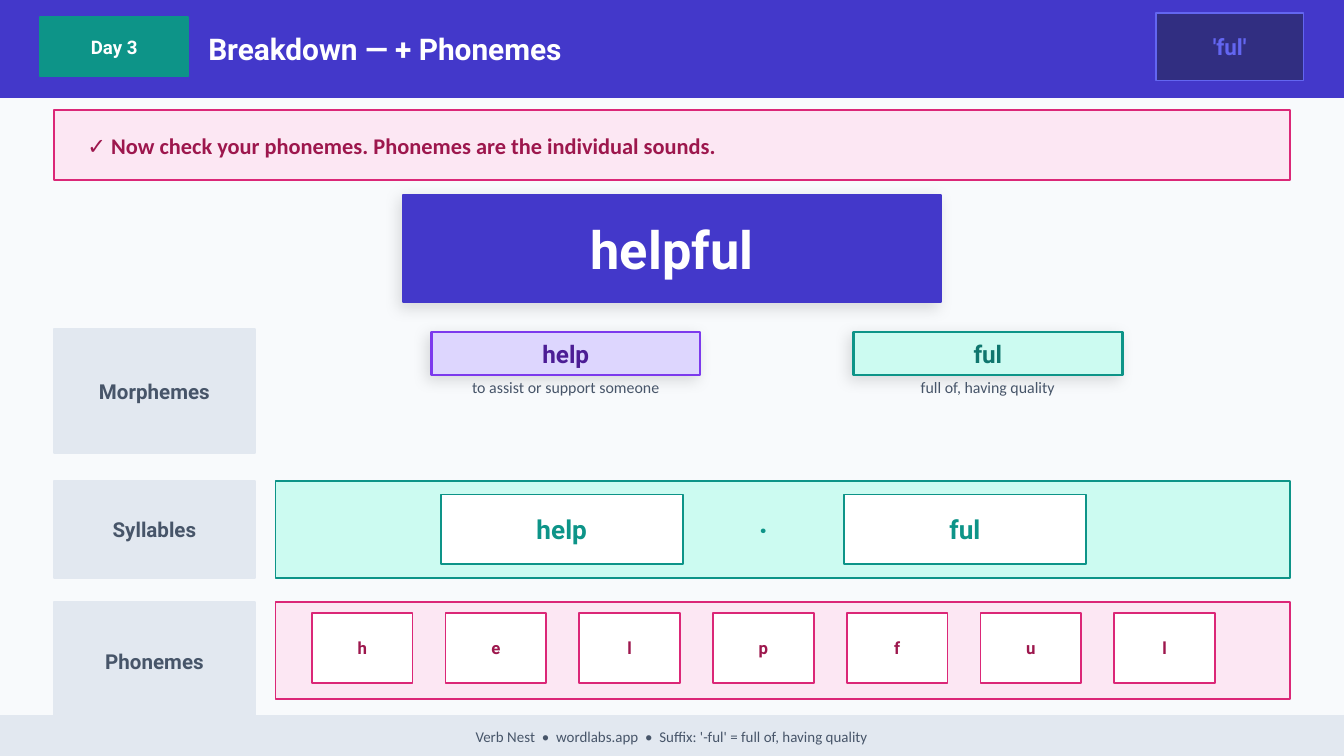
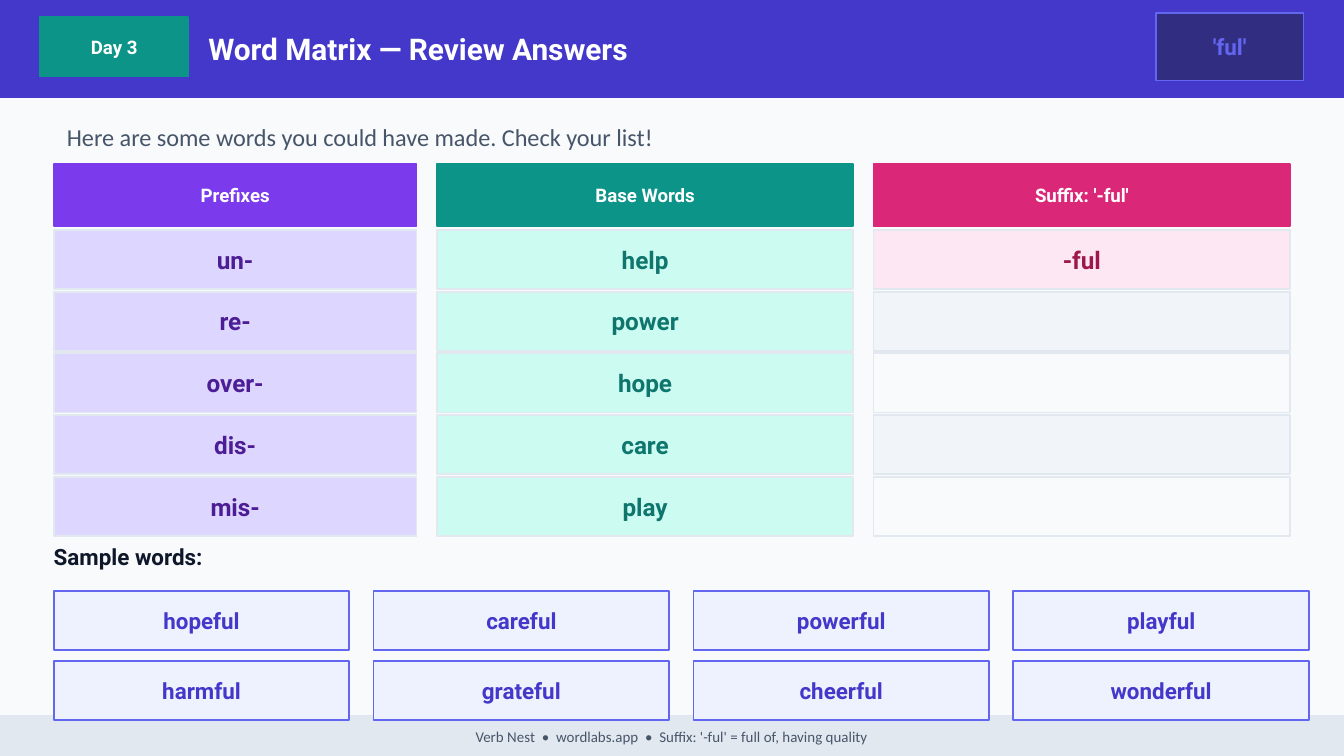
"""Build two lesson slides on the suffix -ful: word breakdown and word matrix."""
from lxml.etree import SubElement
from pptx import Presentation
from pptx.dml.color import RGBColor
from pptx.enum.shapes import MSO_SHAPE
from pptx.enum.text import MSO_ANCHOR, PP_ALIGN
from pptx.oxml.ns import qn
from pptx.util import Inches, Pt

INDIGO, NAVY, PERIWINKLE, ICE = "4338CA", "312E81", "6366F1", "EEF2FF"
TEAL, TEAL_DARK, MINT = "0D9488", "0F766E", "CCFBF1"
PINK, PINK_DARK, BLUSH = "DB2777", "9D174D", "FCE7F3"
VIOLET, VIOLET_DARK, LILAC = "7C3AED", "4C1D95", "DDD6FE"
WHITE, PAPER, FOG, MIST, SLATE, INK = "FFFFFF", "F8FAFC", "F1F5F9", "E2E8F0", "475569", "0F172A"


def add_text(slide, text, left, top, width, height, *, size=12, color=WHITE, bold=True,
             font="Roboto", align=PP_ALIGN.CENTER, anchor=MSO_ANCHOR.MIDDLE, inset=0,
             fill=None, line=None, line_width=1, shadow=False):
    """Place text in a plain box, or in a rectangle when a fill is given."""
    area = [Inches(value) for value in (left, top, width, height)]
    if fill:
        box = slide.shapes.add_shape(MSO_SHAPE.RECTANGLE, *area)
        box.fill.solid()
        box.fill.fore_color.rgb = RGBColor.from_string(fill)
        box.line.color.rgb = RGBColor.from_string(line or fill)
        box.line.width = Pt(line_width)
        box.shadow.inherit = False
        if shadow:
            effects = box.element.spPr.find(qn("a:effectLst"))
            outer = SubElement(effects, qn("a:outerShdw"), blurRad=str(Pt(8)), dist=str(Pt(3)),
                               dir=str(135 * 60000), algn="bl", rotWithShape="0")
            black = SubElement(outer, qn("a:srgbClr"), val="000000")
            SubElement(black, qn("a:alpha"), val="12000")
    else:
        box = slide.shapes.add_textbox(*area)
    if not text:
        return
    frame = box.text_frame
    frame.word_wrap = True
    frame.vertical_anchor = anchor
    frame.margin_left = frame.margin_right = Inches(inset)
    frame.margin_top = frame.margin_bottom = 0
    paragraph = frame.paragraphs[0]
    paragraph.alignment = align
    run = paragraph.add_run()
    run.text = text
    run.font.name = font
    run.font.size = Pt(size)
    run.font.bold = bold
    run.font.color.rgb = RGBColor.from_string(color)


def add_lesson_slide(deck, title):
    """Add a slide with the shared background, header band and footer."""
    slide = deck.slides.add_slide(deck.slide_layouts[6])
    slide.background.fill.solid()
    slide.background.fill.fore_color.rgb = RGBColor.from_string(PAPER)
    add_text(slide, "", 0, 0, 10, 0.72, fill=INDIGO)
    add_text(slide, "Day 3", 0.3, 0.13, 1.1, 0.44, size=10, fill=TEAL)
    add_text(slide, title, 1.55, 0, 8.1, 0.72, size=16, align=PP_ALIGN.LEFT)
    add_text(slide, "'ful'", 8.6, 0.1, 1.1, 0.5, color=PERIWINKLE, fill=NAVY, line=PERIWINKLE)
    add_text(slide, "Verb Nest  •  wordlabs.app  •  Suffix: '-ful' = full of, having quality",
             0, 5.33, 10, 0.3, size=8, color=SLATE, bold=False, font="Calibri", fill=MIST)
    return slide


deck = Presentation()
deck.slide_width, deck.slide_height = Inches(10), Inches(10) * 9 // 16

breakdown = add_lesson_slide(deck, "Breakdown — + Phonemes")
add_text(breakdown, "✓ Now check your phonemes. Phonemes are the individual sounds.",
         0.4, 0.82, 9.2, 0.52, color=PINK_DARK, font="Calibri", align=PP_ALIGN.LEFT,
         inset=0.25, fill=BLUSH, line=PINK)
add_text(breakdown, "helpful", 3, 1.45, 4, 0.8, size=28, fill=INDIGO, shadow=True)

for label, top, height in [("Morphemes", 2.45, 0.92), ("Syllables", 3.58, 0.72),
                           ("Phonemes", 4.48, 0.88)]:
    add_text(breakdown, label, 0.4, top, 1.5, height, size=11, color=SLATE, fill=MIST)

for morpheme, meaning, left, color, fill, line in [
    ("help", "to assist or support someone", 3.21, VIOLET_DARK, LILAC, VIOLET),
    ("ful", "full of, having quality", 6.35, TEAL_DARK, MINT, TEAL),
]:
    add_text(breakdown, morpheme, left, 2.47, 2, 0.32, size=13, color=color,
             fill=fill, line=line, line_width=1.5, shadow=True)
    add_text(breakdown, meaning, left, 2.81, 2, 0.22, size=8.5, color=SLATE, bold=False,
             font="Calibri", anchor=MSO_ANCHOR.TOP)

add_text(breakdown, "", 2.05, 3.58, 7.55, 0.72, fill=MINT, line=TEAL)
for index, syllable in enumerate(["help", "ful"]):
    add_text(breakdown, syllable, 3.28 + 3 * index, 3.68, 1.8, 0.52, size=14, color=TEAL,
             fill=WHITE, line=TEAL)
add_text(breakdown, "·", 5.08, 3.68, 1.2, 0.52, size=16, color=TEAL)

add_text(breakdown, "", 2.05, 4.48, 7.55, 0.72, fill=BLUSH, line=PINK)
for index, phoneme in enumerate("helpful"):
    add_text(breakdown, phoneme, 2.32 + index * 5.97 / 6, 4.56, 0.75, 0.52, size=9,
             color=PINK_DARK, fill=WHITE, line=PINK)

matrix = add_lesson_slide(deck, "Word Matrix — Review Answers")
add_text(matrix, "Here are some words you could have made. Check your list!", 0.4, 0.82, 9.2, 0.4,
         size=13, color=SLATE, bold=False, font="Calibri", align=PP_ALIGN.LEFT, inset=0.1)

for heading, left, width, accent, color, tint, parts in [
    ("Prefixes", 0.4, 2.7, VIOLET, VIOLET_DARK, LILAC, ["un-", "re-", "over-", "dis-", "mis-"]),
    ("Base Words", 3.25, 3.1, TEAL, TEAL_DARK, MINT, ["help", "power", "hope", "care", "play"]),
    ("Suffix: '-ful'", 6.5, 3.1, PINK, PINK_DARK, BLUSH, ["-ful", "", "", "", ""]),
]:
    add_text(matrix, heading, left, 1.22, width, 0.46, size=10, fill=accent)
    for row, part in enumerate(parts):
        empty_fill = FOG if row % 2 else PAPER
        add_text(matrix, part, left, 1.71 + 0.46 * row, width, 0.44, size=13, color=color,
                 fill=tint if part else empty_fill, line=MIST)

add_text(matrix, "Sample words:", 0.4, 3.95, 2, 0.38, color=INK, align=PP_ALIGN.LEFT)
samples = ["hopeful", "careful", "powerful", "playful",
           "harmful", "grateful", "cheerful", "wonderful"]
for index, sample in enumerate(samples):
    row, column = divmod(index, 4)
    add_text(matrix, sample, 0.4 + 2.38 * column, 4.4 + 0.52 * row, 2.2, 0.44,
             color=INDIGO, fill=ICE, line=PERIWINKLE)

deck.save("out.pptx")
